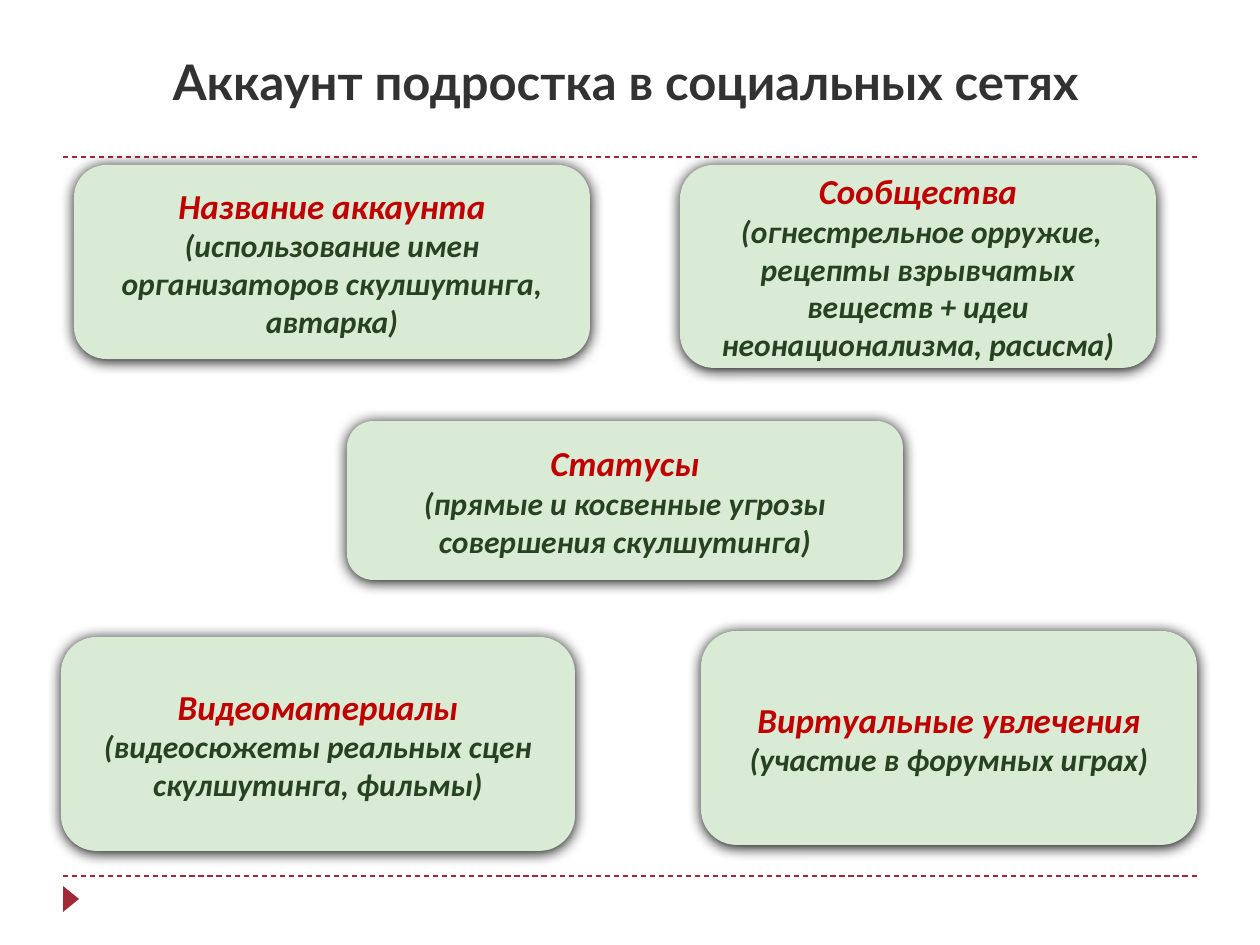
from lxml import etree
from pptx import Presentation
from pptx.dml.color import RGBColor
from pptx.enum.dml import MSO_LINE
from pptx.enum.shapes import MSO_CONNECTOR, MSO_SHAPE
from pptx.enum.text import MSO_ANCHOR, PP_ALIGN
from pptx.oxml import parse_xml
from pptx.oxml.ns import nsdecls, qn
from pptx.util import Pt

STRAIGHT = MSO_CONNECTOR.STRAIGHT
ROUNDED = MSO_SHAPE.ROUNDED_RECTANGLE
TRIANGLE = MSO_SHAPE.ISOSCELES_TRIANGLE
CENTER = PP_ALIGN.CENTER
MIDDLE, BOTTOM = MSO_ANCHOR.MIDDLE, MSO_ANCHOR.BOTTOM
DASH = MSO_LINE.DASH

# Content: card box in px (left, top, width, height), heading, details
TITLE = "Аккаунт подростка в социальных сетях"
TITLE_BOX = (25, 21, 1201, 96)
CARDS = [
    ((74, 165, 516, 194), "Название аккаунта",
     "(использование имен организаторов скулшутинга, автарка)"),
    ((680, 165, 476, 203), "Сообщества",
     " (огнестрельное орружие, рецепты взрывчатых веществ + идеи "
     "неонационализма, расисма)"),
    ((347, 421, 556, 159), "Статусы",
     "(прямые и косвенные угрозы совершения скулшутинга)"),
    ((61, 637, 514, 214), "Видеоматериалы",
     "(видеосюжеты реальных сцен скулшутинга, фильмы)"),
    ((701, 631, 496, 214), "Виртуальные увлечения",
     "(участие в форумных играх)"),
]
RULE_LEFT, RULE_RIGHT = 63, 1197
RULE_TOPS = (157, 876)
MARKER_BOX = (58, 891, 26, 16)

THEME = {
    "accent": RGBColor.from_string("9F2936"),
    "title": RGBColor.from_string("323232"),
    "card": RGBColor.from_string("D9EAD5"),
    "heading": RGBColor.from_string("C00000"),
    "details": RGBColor.from_string("274221"),
    "title_font": "Lato", "card_font": "Calibri",
    "title_size": 28, "heading_size": 20, "details_size": 18,
}
EMU_PER_PX = 914400 / 126


def px(*lengths):
    return [round(length * EMU_PER_PX) for length in lengths]


def write(paragraph, text, role, font_name, italic=False):
    paragraph.text = text
    paragraph.alignment = CENTER
    for run in paragraph.runs:
        font = run.font
        font.name, font.size = font_name, Pt(THEME[role + "_size"])
        font.bold, font.italic = True, italic
        font.color.rgb = THEME[role]


def add_filled(slide, kind, box, color):
    shape = slide.shapes.add_shape(kind, *px(*box))
    shape.shadow.inherit = False
    shape.fill.solid()
    shape.fill.fore_color.rgb = color
    shape.line.fill.background()
    return shape


def add_rule(slide, top):
    rule = slide.shapes.add_connector(
        STRAIGHT, *px(RULE_LEFT, top, RULE_RIGHT, top))
    rule.line.color.rgb = THEME["accent"]
    rule.line.width = Pt(0.75)
    rule.line.dash_style = DASH
    etree.SubElement(rule._element.spPr, qn("a:effectLst"))


def add_card(slide, box, heading, details):
    card = add_filled(slide, ROUNDED, box, THEME["card"])
    effects = card._element.spPr.find(qn("a:effectLst"))
    effects.append(parse_xml(
        f'<a:outerShdw {nsdecls("a")} blurRad="{Pt(8.5)}" dist="{Pt(1)}" '
        'dir="5400000" algn="tl" rotWithShape="0">'
        '<a:srgbClr val="000000"/></a:outerShdw>'))
    frame = card.text_frame
    frame.word_wrap = True
    frame.vertical_anchor = MIDDLE
    write(frame.paragraphs[0], heading, "heading", THEME["card_font"], True)
    write(frame.add_paragraph(), details, "details", THEME["card_font"], True)


def main():
    presentation = Presentation()
    presentation.slide_width, presentation.slide_height = px(1260, 945)
    slide = presentation.slides.add_slide(presentation.slide_layouts[6])

    # Rules and corner marker
    for top in RULE_TOPS:
        add_rule(slide, top)
    add_filled(slide, TRIANGLE, MARKER_BOX, THEME["accent"]).rotation = 90

    # Title
    title = slide.shapes.add_textbox(*px(*TITLE_BOX)).text_frame
    title.word_wrap = True
    title.vertical_anchor = BOTTOM
    write(title.paragraphs[0], TITLE, "title", THEME["title_font"])

    # Cards
    for box, heading, details in CARDS:
        add_card(slide, box, heading, details)

    presentation.save("out.pptx")


if __name__ == "__main__":
    main()
